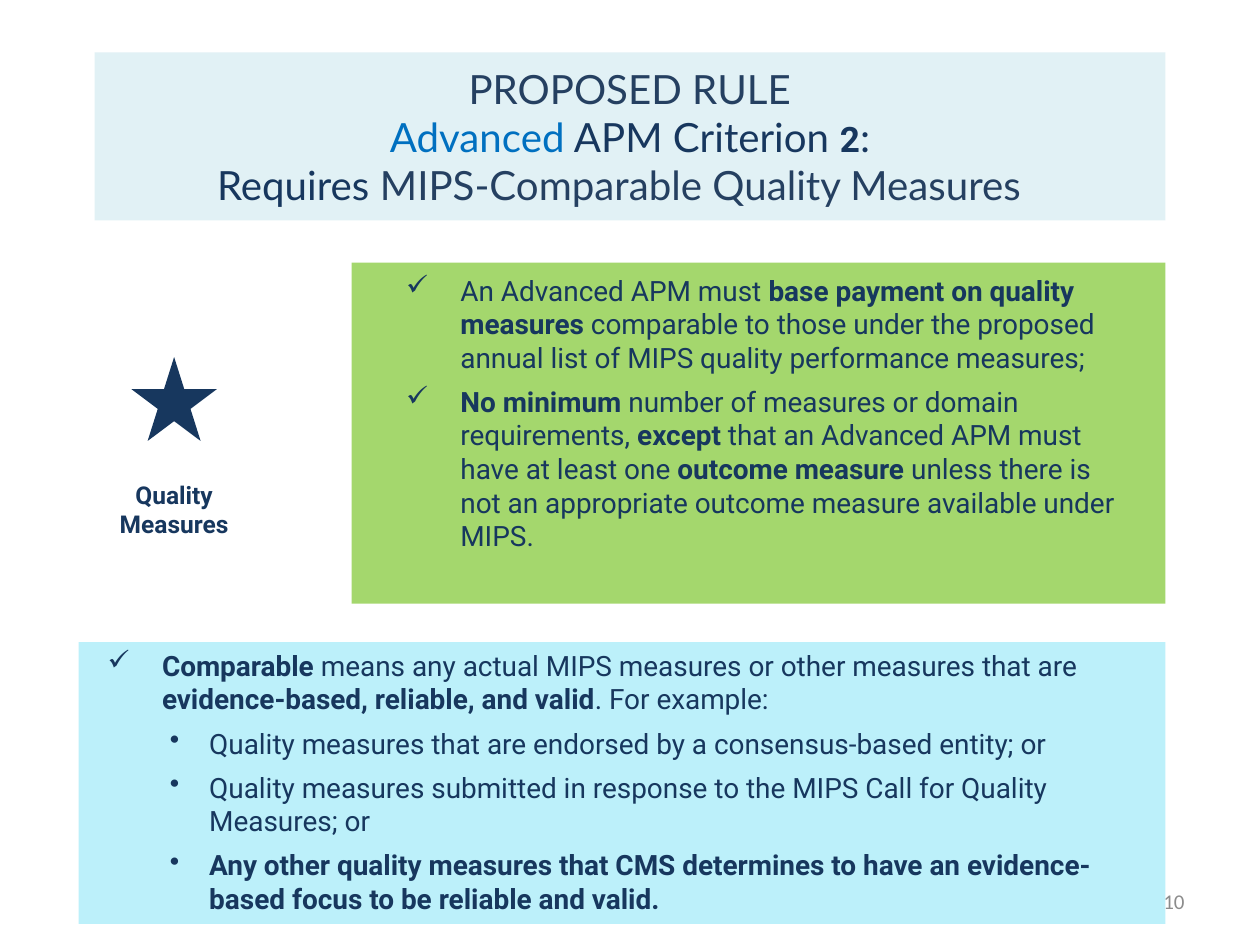
from lxml import etree
from pptx import Presentation
from pptx.dml.color import RGBColor
from pptx.enum.shapes import MSO_SHAPE
from pptx.enum.text import MSO_ANCHOR, MSO_AUTO_SIZE, PP_ALIGN
from pptx.oxml.ns import qn
from pptx.util import Pt

RECTANGLE, STAR = MSO_SHAPE.RECTANGLE, MSO_SHAPE.STAR_5_POINT
TOP, MIDDLE = MSO_ANCHOR.TOP, MSO_ANCHOR.MIDDLE
CENTER, RIGHT = PP_ALIGN.CENTER, PP_ALIGN.RIGHT
LEFT = PP_ALIGN.LEFT
NO_AUTOFIT = MSO_AUTO_SIZE.NONE

NAVY = RGBColor(0x17, 0x37, 0x5E)
SLATE = RGBColor(0x25, 0x40, 0x61)
BLUE = RGBColor(0x00, 0x70, 0xC0)
GRAY = RGBColor(0x8C, 0x8C, 0x8C)
GREEN = RGBColor(0x92, 0xD0, 0x50)
PALE_BLUE = RGBColor(0xDB, 0xEE, 0xF4)
CYAN = RGBColor(0xBC, 0xF0, 0xFA)

# Bullet character, left margin and hanging indent in points, by level
BULLETS = [("✓", 40.5, -31), ("•", 67.5, -22.5)]


def add_run(paragraph, text, font="Roboto", size=16, color=NAVY, bold=False):
    run = paragraph.add_run()
    run.text = text
    values = {"name": font, "size": Pt(size), "bold": bold}
    for attribute, value in values.items():
        setattr(run.font, attribute, value)
    run.font.color.rgb = color


def fill_solid(shape, color, opacity=100):
    """Fill without outline or shadow; opacity is in percent."""
    shape.fill.solid()
    shape.fill.fore_color.rgb = color
    shape.line.fill.background()
    shape.shadow.inherit = False
    if opacity < 100:
        srgb = shape.fill._xPr.find(".//" + qn("a:srgbClr"))
        etree.SubElement(srgb, qn("a:alpha"), val=str(opacity * 1000))


prs = Presentation()
prs.slide_width, prs.slide_height = Pt(720), Pt(540)
slide = prs.slides.add_slide(prs.slide_layouts[5])

# Title
title = slide.shapes.title
title.left, title.top, title.width, title.height = Pt(54), Pt(30), Pt(612), Pt(96)
fill_solid(title, PALE_BLUE, 82)
title_frame = title.text_frame
title_frame.auto_size = NO_AUTOFIT
title_frame.vertical_anchor = MIDDLE
title_lines = [
    [("PROPOSED RULE", SLATE)],
    [("Advanced", BLUE), (" APM Criterion ", NAVY), ("2", NAVY), (":", NAVY)],
    [("Requires ", NAVY), ("MIPS-Comparable Quality Measures", SLATE)],
]
for index, line in enumerate(title_lines):
    paragraph = title_frame.paragraphs[0] if index == 0 else title_frame.add_paragraph()
    paragraph.alignment = CENTER
    for text, color in line:
        if text == "2":
            add_run(paragraph, text, size=20, color=color, bold=True)
        else:
            add_run(paragraph, text, "Lato", 23, color)
# The last line sits slightly left of centre
paragraph._p.get_or_add_pPr().set("marR", str(Pt(12)))

# Page number, partly behind the lower panel
page_number = slide.shapes.add_textbox(Pt(516), Pt(500.5), Pt(168), Pt(29))
page_number.text_frame.word_wrap = True
page_number.text_frame.vertical_anchor = MIDDLE
paragraph = page_number.text_frame.paragraphs[0]
paragraph.alignment = RIGHT
add_run(paragraph, "10", "Calibri", 12, GRAY)

# Bulleted panels; ** switches bold on and off
panels = [
    {
        "box": (201, 150, 465, 195), "color": GREEN, "opacity": 83,
        "side_inset": 21.6, "top_inset": 6,
        "items": [
            (0, "An Advanced APM must **base payment on quality measures** comparable to "
                "those under the proposed annual list of MIPS quality performance measures;"),
            (0, "**No minimum **number of measures or domain requirements, **except** that "
                "an Advanced APM must have at least one **outcome measure** unless there is "
                "not an appropriate outcome measure available under MIPS."),
        ],
    },
    {
        "box": (45, 367, 621, 161), "color": CYAN, "opacity": 100,
        "side_inset": 7.2, "top_inset": 3.6,
        "items": [
            (0, "**Comparable **means any actual MIPS measures or other measures that are "
                "**evidence-based, reliable, and valid**. For example:"),
            (1, "Quality measures that are endorsed by a consensus-based entity; or"),
            (1, "Quality measures submitted in response to the MIPS Call for Quality "
                "Measures; or"),
            (1, "**Any other quality measures that CMS determines to have an "
                "evidence-based focus to be reliable and valid.**"),
        ],
    },
]
for panel in panels:
    rectangle = slide.shapes.add_shape(RECTANGLE, *map(Pt, panel["box"]))
    fill_solid(rectangle, panel["color"], panel["opacity"])
    frame = rectangle.text_frame
    frame_format = {
        "word_wrap": True,
        "vertical_anchor": TOP,
        "margin_left": Pt(panel["side_inset"]),
        "margin_right": Pt(panel["side_inset"]),
        "margin_top": Pt(panel["top_inset"]),
    }
    for attribute, value in frame_format.items():
        setattr(frame, attribute, value)
    for index, (level, text) in enumerate(panel["items"]):
        paragraph = frame.paragraphs[0] if index == 0 else frame.add_paragraph()
        paragraph.level = level
        paragraph.alignment = LEFT
        paragraph.space_after = Pt(6)
        bullet, margin, indent = BULLETS[level]
        properties = paragraph._p.get_or_add_pPr()
        properties.set("marL", str(Pt(margin)))
        properties.set("indent", str(Pt(indent)))
        etree.SubElement(properties, qn("a:buChar"), char=bullet)
        for part, words in enumerate(text.split("**")):
            if words:
                add_run(paragraph, words, bold=part % 2 == 1)

# Star with its label
quality_badge = slide.shapes.add_group_shape()
star = quality_badge.shapes.add_shape(STAR, Pt(75), Pt(204), Pt(49), Pt(48))
fill_solid(star, NAVY)
label = quality_badge.shapes.add_textbox(Pt(31), Pt(259), Pt(137), Pt(64))
label_format = {
    "word_wrap": True,
    "vertical_anchor": MIDDLE,
    "margin_left": Pt(21.6),
    "margin_right": Pt(21.6),
    "margin_top": Pt(7.2),
    "margin_bottom": Pt(7.2),
}
for attribute, value in label_format.items():
    setattr(label.text_frame, attribute, value)
paragraph = label.text_frame.paragraphs[0]
paragraph.alignment = CENTER
add_run(paragraph, "Quality Measures", size=14, bold=True)

prs.save("out.pptx")
